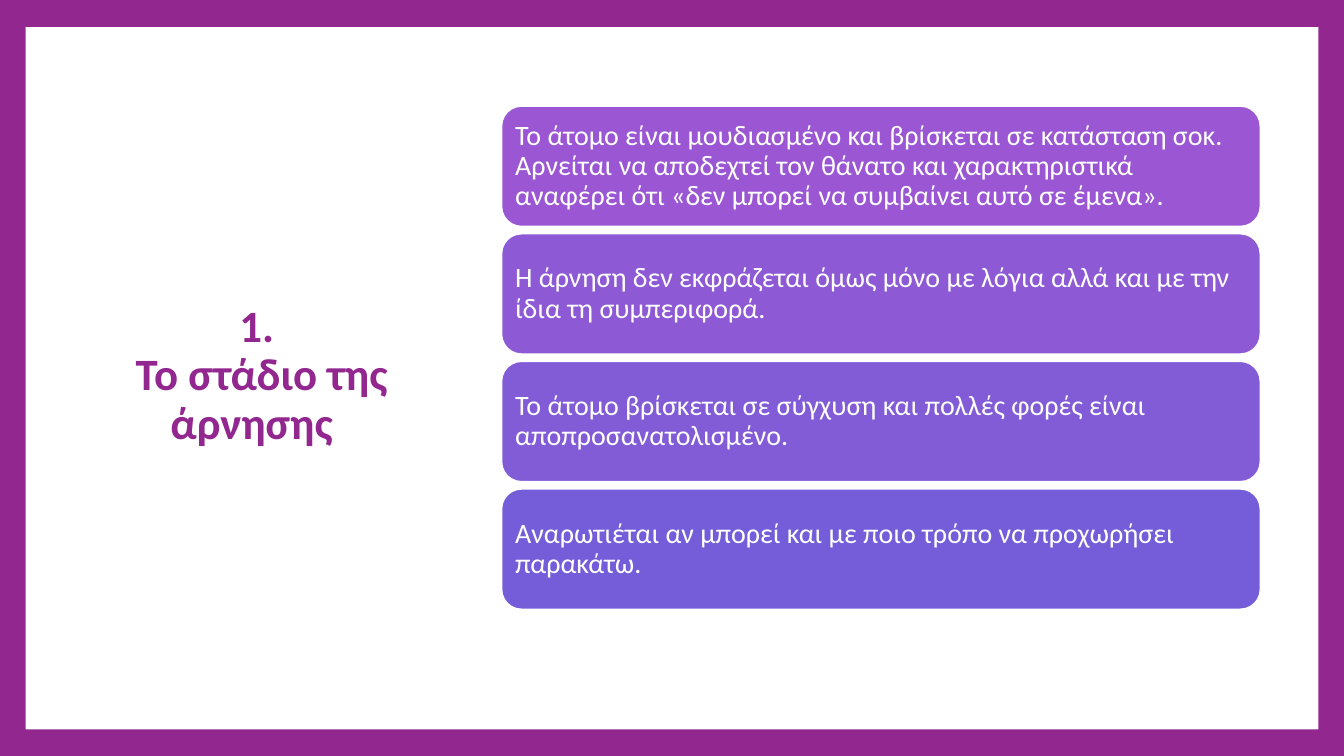
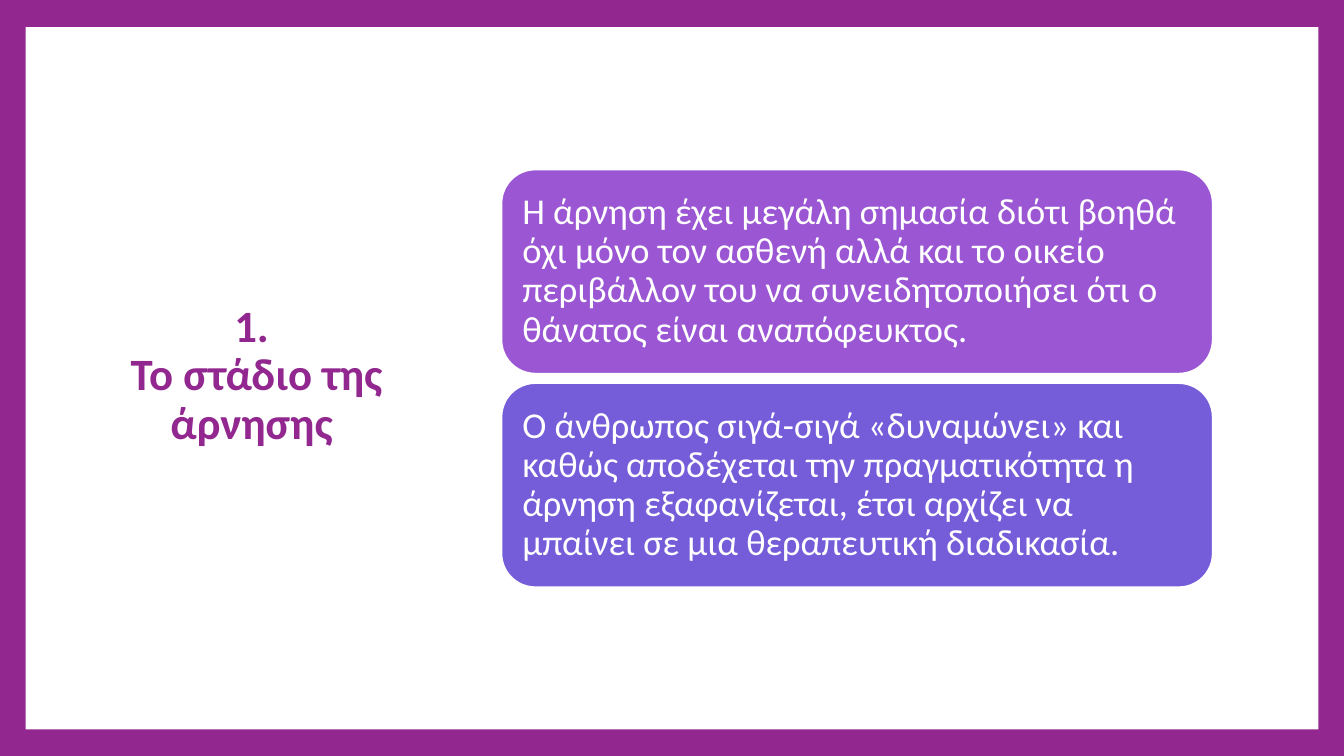
import pptx
import pptx.dml.color
import pptx.enum.shapes
import pptx.enum.text
import pptx.util

PURPLE, WHITE = "92278F", "FFFFFF"
CARD_FIRST, CARD_LAST = "9B57D3", "755DD9"
FONT = "Calibri"
SHAPE = pptx.enum.shapes.MSO_SHAPE
ALIGN = pptx.enum.text.PP_ALIGN


def rgb(value):
    return pptx.dml.color.RGBColor.from_string(value)


def blend(first, last, share):
    """Return the hex colour lying at the given share between two others."""
    pairs = zip(rgb(first), rgb(last))
    return "".join(f"{round(a + (b - a) * share):02X}" for a, b in pairs)


class Deck:
    """Shared style and current slide; lengths are percentages of the slide."""

    def __init__(self):
        self.prs = pptx.Presentation()
        self.prs.slide_width = pptx.util.Inches(13.333)
        self.prs.slide_height = pptx.util.Inches(7.5)
        self.layout = self.prs.slide_layouts[5]
        fill = self.prs.slide_master.background.fill
        fill.solid()
        fill.fore_color.rgb = rgb(PURPLE)
        self.s = None

    def box(self, left, top, width, height):
        w, h = self.prs.slide_width, self.prs.slide_height
        return [round(share * side / 100) for share, side in
                ((left, w), (top, h), (width, w), (height, h))]

    def add_slide(self, title):
        self.s = self.prs.slides.add_slide(self.layout)
        if len(self.prs.slides) == 1:
            self.panel()
        self.title(title)

    def panel(self):
        """Put the white panel at the back of the layout, for every slide."""
        sp = self.shape(SHAPE.RECTANGLE, (1.9, 3.6, 96.2, 92.9), WHITE)
        self.layout.shapes.element.insert(2, sp.element)

    def shape(self, kind, place, color):
        sp = self.s.shapes.add_shape(kind, *self.box(*place))
        sp.shadow.inherit = False
        sp.fill.solid()
        sp.fill.fore_color.rgb = rgb(color)
        sp.line.fill.background()
        return sp

    def set_text(self, sp, text, size, color, align, bold=False):
        tf = sp.text_frame
        tf.text = text
        tf.word_wrap = True
        tf.auto_size = pptx.enum.text.MSO_AUTO_SIZE.NONE
        tf.vertical_anchor = pptx.enum.text.MSO_ANCHOR.MIDDLE
        for p in tf.paragraphs:
            p.alignment = align
            p.line_spacing = 0.9
            for r in p.runs:
                r.font.name = FONT
                r.font.size = pptx.util.Pt(size)
                r.font.bold = bold
                r.font.color.rgb = rgb(color)

    def title(self, text):
        sp = self.s.shapes.title
        sp.left, sp.top, sp.width, sp.height = self.box(5.3, 8.9, 27.6, 81.7)
        self.set_text(sp, text, 32, PURPLE, ALIGN.CENTER, bold=True)

    def cards(self, texts, top, width, height, gap, size, inset):
        """Stack rounded cards whose fill runs from the first to the last colour."""
        for i, text in enumerate(texts):
            color = blend(CARD_FIRST, CARD_LAST, i / (len(texts) - 1))
            place = (37.3, top + i * (height + gap), width, height)
            sp = self.shape(SHAPE.ROUNDED_RECTANGLE, place, color)
            sp.line.color.rgb = rgb(WHITE)
            sp.line.width = pptx.util.Pt(1.5)
            tf = sp.text_frame
            tf.margin_left = tf.margin_right = pptx.util.Inches(inset)
            tf.margin_top = tf.margin_bottom = pptx.util.Inches(inset)
            self.set_text(sp, text, size, WHITE, ALIGN.LEFT)


def main():
    deck = Deck()

    deck.add_slide("1.\v Το στάδιο της άρνησης ")
    deck.cards([
        "Το άτομο είναι μουδιασμένο και βρίσκεται σε κατάσταση σοκ. Αρνείται να "
        "αποδεχτεί τον θάνατο και χαρακτηριστικά αναφέρει ότι «δεν μπορεί να "
        "συμβαίνει αυτό σε έμενα».",
        "Η άρνηση δεν εκφράζεται όμως μόνο με λόγια αλλά και με την ίδια τη "
        "συμπεριφορά.",
        "Το άτομο βρίσκεται σε σύγχυση και πολλές φορές είναι "
        "αποπροσανατολισμένο.",
        "Αναρωτιέται αν μπορεί και με ποιο τρόπο να προχωρήσει παρακάτω.",
    ], top=14, width=56.5, height=16, gap=0.88, size=20, inset=0.08)

    deck.add_slide("1. \vΤο στάδιο της άρνησης ")
    deck.cards([
        "Η άρνηση έχει μεγάλη σημασία διότι βοηθά όχι μόνο τον ασθενή αλλά και "
        "το οικείο περιβάλλον του να συνειδητοποιήσει ότι ο θάνατος είναι "
        "αναπόφευκτος.",
        "Ο άνθρωπος σιγά-σιγά «δυναμώνει» και καθώς αποδέχεται την "
        "πραγματικότητα η άρνηση εξαφανίζεται, έτσι αρχίζει να μπαίνει σε μια "
        "θεραπευτική διαδικασία.",
    ], top=22.4, width=52.95, height=27.05, gap=1.2, size=26, inset=0.11)

    deck.prs.save("out.pptx")


if __name__ == "__main__":
    main()
